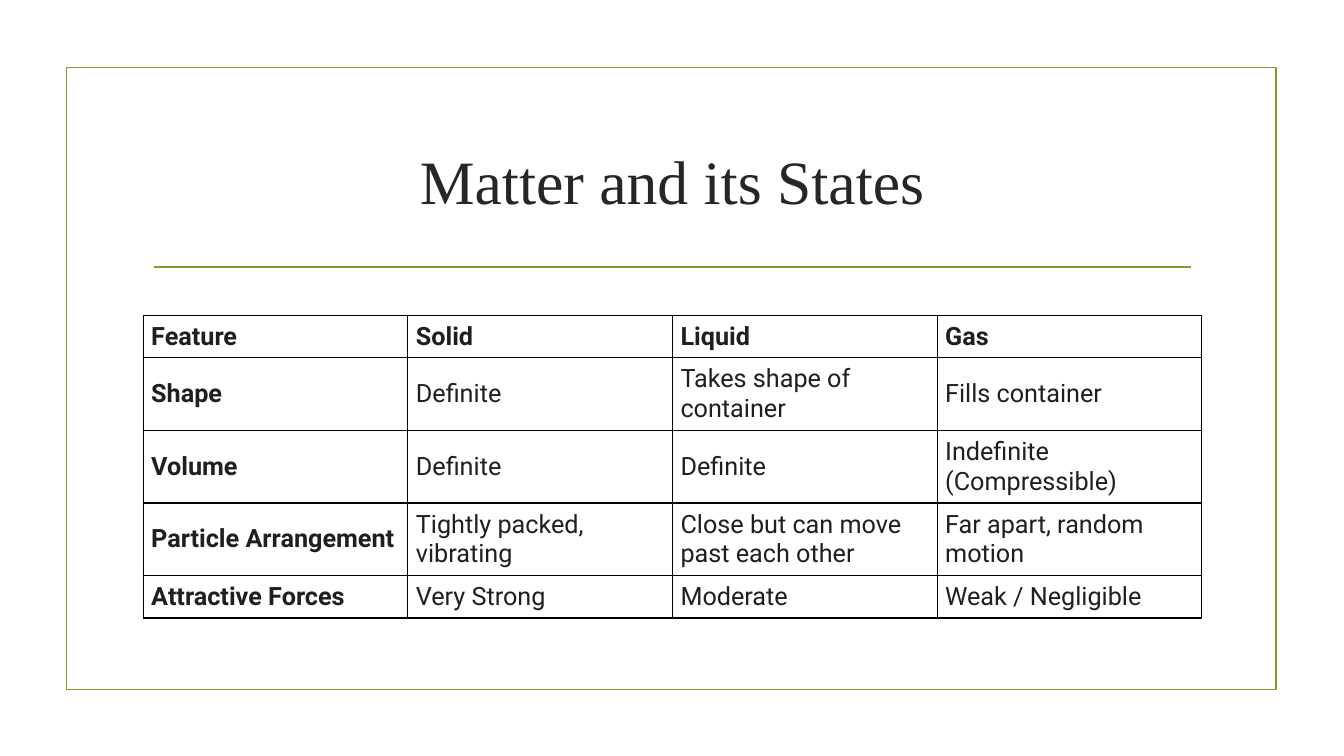
"""Build a slide comparing the states of matter in a table."""
from dataclasses import dataclass

from lxml.etree import SubElement
from pptx import Presentation
from pptx.dml.color import RGBColor as Rgb
from pptx.enum.shapes import MSO_CONNECTOR as Connector, MSO_SHAPE as Preset
from pptx.enum.text import MSO_ANCHOR as Anchor, PP_ALIGN as Align
from pptx.oxml.ns import qn
from pptx.slide import Slide
from pptx.table import _Cell as Cell
from pptx.text.text import _Paragraph as Paragraph
from pptx.util import Inches, Pt


@dataclass(frozen=True)
class Theme:
    green: Rgb = Rgb.from_string("83992A")
    title_ink: Rgb = Rgb.from_string("262626")
    table_ink: Rgb = Rgb.from_string("1F1F1F")
    grid: Rgb = Rgb.from_string("000000")
    title_font: str = "Times New Roman"
    table_font: str = "Roboto"
    title_size: int = 44
    table_size: int = 18
    rule_width: float = 1.25
    grid_width: int = 1


@dataclass(frozen=True)
class FeatureRow:
    feature: str
    solid: str
    liquid: str
    gas: str
    height: float = 0.7

    def texts(self) -> tuple[str, ...]:
        return self.feature, self.solid, self.liquid, self.gas


THEME = Theme()
ONE_LINE = 0.41
LEFT, WIDTH = 1.42, 10.5
FEATURES = [
    FeatureRow("Feature", "Solid", "Liquid", "Gas", ONE_LINE),
    FeatureRow("Shape", "Definite", "Takes shape of container", "Fills container"),
    FeatureRow("Volume", "Definite", "Definite", "Indefinite (Compressible)"),
    FeatureRow("Particle Arrangement", "Tightly packed, vibrating",
               "Close but can move past each other", "Far apart, random motion"),
    FeatureRow("Attractive Forces", "Very Strong", "Moderate", "Weak / Negligible", ONE_LINE),
]


def add_run(paragraph: Paragraph, text: str, font: str, size: int, ink: Rgb,
            bold: bool = False) -> None:
    run = paragraph.add_run()
    run.text = text
    run.font.name = font
    run.font.size = Pt(size)
    run.font.color.rgb = ink
    run.font.bold = bold


def draw_frame(slide: Slide) -> None:
    frame = slide.shapes.add_shape(
        Preset.RECTANGLE, Inches(0.66), Inches(0.67), Inches(12), Inches(6.17))
    frame.shadow.inherit = False
    frame.fill.background()
    rule = slide.shapes.add_connector(
        Connector.STRAIGHT, Inches(1.53), Inches(2.65), Inches(11.81), Inches(2.65))
    SubElement(rule.element.spPr, qn("a:effectLst"))
    for outlined in (frame, rule):
        outlined.line.color.rgb = THEME.green
        outlined.line.width = Pt(THEME.rule_width)


def draw_title(slide: Slide) -> None:
    title = slide.shapes.add_textbox(
        Inches(LEFT), Inches(1.07), Inches(WIDTH), Inches(1.43)).text_frame
    title.word_wrap = True
    title.vertical_anchor = Anchor.MIDDLE
    heading = title.paragraphs[0]
    heading.alignment = Align.CENTER
    add_run(heading, "Matter and its States", THEME.title_font, THEME.title_size,
            THEME.title_ink)


def style_cell(cell: Cell) -> None:
    cell.vertical_anchor = Anchor.MIDDLE
    cell.margin_left = cell.margin_right = Inches(0.08)
    cell.margin_top = cell.margin_bottom = Inches(0.06)
    properties = cell._tc.get_or_add_tcPr()
    for side in ("lnL", "lnR", "lnT", "lnB"):
        border = SubElement(properties, qn(f"a:{side}"), w=str(Pt(THEME.grid_width)))
        ink = SubElement(border, qn("a:solidFill"))
        SubElement(ink, qn("a:srgbClr"), val=str(THEME.grid))
    cell.fill.background()


def draw_table(slide: Slide) -> None:
    column_count = len(FEATURES[0].texts())
    height = sum(row.height for row in FEATURES)
    states = slide.shapes.add_table(
        len(FEATURES), column_count, Inches(LEFT), Inches(3.13),
        Inches(WIDTH), Inches(height)).table
    states.first_row = states.horz_banding = False
    for column in states.columns:
        column.width = Inches(WIDTH / column_count)
    for r, row in enumerate(FEATURES):
        states.rows[r].height = Inches(row.height)
        for c, text in enumerate(row.texts()):
            cell = states.cell(r, c)
            style_cell(cell)
            add_run(cell.text_frame.paragraphs[0], text, THEME.table_font,
                    THEME.table_size, THEME.table_ink, bold=r == 0 or c == 0)


def main() -> None:
    deck = Presentation()
    deck.slide_width, deck.slide_height = Inches(13.33), Inches(7.5)
    slide = deck.slides.add_slide(deck.slide_layouts[6])
    draw_frame(slide)
    draw_title(slide)
    draw_table(slide)
    deck.save("out.pptx")


if __name__ == "__main__":
    main()
